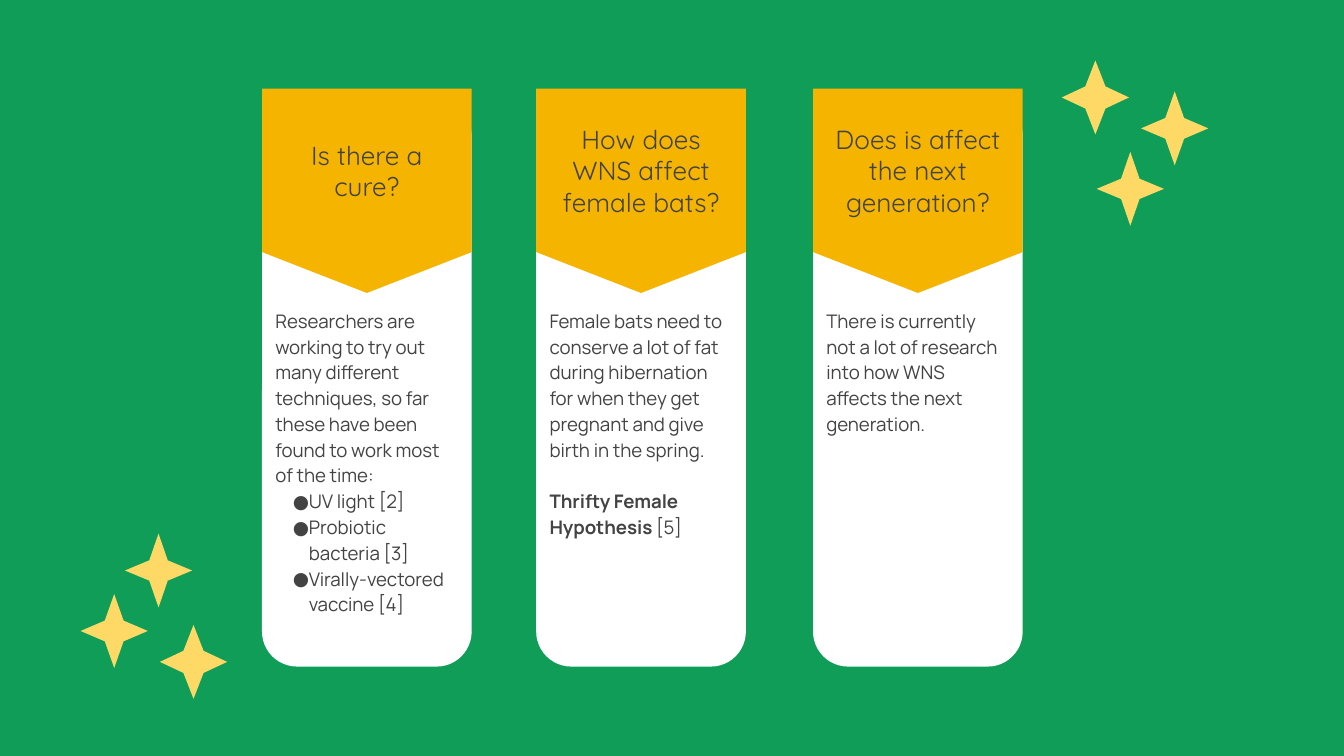
from dataclasses import dataclass
from typing import NamedTuple

from lxml.etree import SubElement
from pptx import Presentation
from pptx.dml.color import RGBColor
from pptx.enum.shapes import MSO_SHAPE
from pptx.enum.text import MSO_ANCHOR, PP_ALIGN
from pptx.oxml.ns import qn
from pptx.util import Inches, Pt

GREEN, GOLD, WHITE, YELLOW = "0F9D58", "F4B400", "FFFFFF", "FFD966"
GREY = "434343"
HEADING_FONT, BODY_FONT = "Quicksand", "Manrope"
CARD_WIDTH, ANSWER_WIDTH = 1.56, 1.55
STAR_WIDTH, STAR_HEIGHT = 0.5, 0.55


class Passage(NamedTuple):
    text: str
    lead: str = ""  # bold opening words
    bullet: bool = False
    before: float = 0


@dataclass
class Card:
    left: float
    heading: str
    passages: list[Passage]
    heading_color: str = "424242"


class Star(NamedTuple):
    left: float
    top: float
    waist: float


CARDS = [
    Card(1.95, "Is there a cure?", [
        Passage("Researchers are working to try out many different techniques, "
                "so far these have been found to work most of the time:"),
        Passage("UV light [2]", bullet=True),
        Passage("Probiotic bacteria [3]", bullet=True),
        Passage("Virally-vectored vaccine [4]", bullet=True),
    ]),
    Card(3.99, "How does WNS affect female bats?", [
        Passage("Female bats need to conserve a lot of fat during hibernation "
                "for when they get pregnant and give birth in the spring."),
        Passage(" [5]", lead="Thrifty Female Hypothesis", before=13.8),
    ]),
    Card(6.05, "Does is affect the next generation?", [
        Passage("There is currently not a lot of research into how WNS "
                "affects the next generation."),
    ], GREY),
]

STARS = [Star(0.93, 3.97, 0.194), Star(0.6, 4.42, 0.198), Star(1.19, 4.65, 0.212)]


def rgb(color: str) -> RGBColor:
    return RGBColor.from_string(color)


def add_block(slide, kind, left: float, top: float, width: float, height: float,
              color: str, adjust: float | None = None):
    block = slide.shapes.add_shape(
        kind, Inches(left), Inches(top), Inches(width), Inches(height))
    block.shadow.inherit = False
    block.fill.solid()
    block.fill.fore_color.rgb = rgb(color)
    block.line.fill.background()
    if adjust is not None:
        block.adjustments[0] = adjust
    return block


def prepare_frame(frame, anchor) -> None:
    frame.word_wrap = True
    frame.vertical_anchor = anchor
    frame.margin_left = frame.margin_right = Inches(0.1)
    frame.margin_top = frame.margin_bottom = Inches(0.1)


def add_text(paragraph, text: str, *, font: str, size: float, color: str = GREY,
             bold: bool = False) -> None:
    run = paragraph.add_run()
    run.text = text
    run.font.name = font
    run.font.size = Pt(size)
    run.font.bold = bold
    run.font.color.rgb = rgb(color)


def add_bullet(paragraph) -> None:
    properties = paragraph._p.get_or_add_pPr()
    properties.set("marL", str(Inches(0.25)))
    properties.set("indent", str(Inches(-0.12)))
    bullet_color = SubElement(properties, qn("a:buClr"))
    SubElement(bullet_color, qn("a:srgbClr"), val=GREY)
    SubElement(properties, qn("a:buSzPts"), val="1000")
    SubElement(properties, qn("a:buFont"), typeface=BODY_FONT)
    SubElement(properties, qn("a:buChar"), char="●")


def add_card(slide, card: Card) -> None:
    # White panel and gold pointed heading
    add_block(slide, MSO_SHAPE.ROUNDED_RECTANGLE, card.left, 0.75, CARD_WIDTH, 4.21,
              WHITE, 0.167)
    banner = add_block(slide, MSO_SHAPE.FLOWCHART_OFFPAGE_CONNECTOR, card.left, 0.66,
                       CARD_WIDTH, 1.52, GOLD)
    prepare_frame(banner.text_frame, MSO_ANCHOR.MIDDLE)
    heading = banner.text_frame.paragraphs[0]
    heading.alignment = PP_ALIGN.CENTER
    add_text(heading, card.heading, font=HEADING_FONT, size=14, color=card.heading_color)

    # Answer
    answer = slide.shapes.add_textbox(
        Inches(card.left), Inches(2.18), Inches(ANSWER_WIDTH), Inches(2.6)).text_frame
    prepare_frame(answer, MSO_ANCHOR.TOP)
    for index, passage in enumerate(card.passages):
        paragraph = answer.add_paragraph() if index else answer.paragraphs[0]
        if passage.bullet:
            add_bullet(paragraph)
        paragraph.line_spacing = 1.15
        if passage.before:
            paragraph.space_before = Pt(passage.before)
        if passage.lead:
            add_text(paragraph, passage.lead, font=BODY_FONT, size=10, bold=True)
        add_text(paragraph, passage.text, font=BODY_FONT, size=10)


def add_star(slide, star: Star, rotation: float = 0) -> None:
    sparkle = add_block(slide, MSO_SHAPE.STAR_4_POINT, star.left, star.top,
                        STAR_WIDTH, STAR_HEIGHT, YELLOW, star.waist)
    sparkle.rotation = rotation


def main() -> None:
    # Widescreen, 16 to 9
    deck = Presentation()
    deck.slide_width = Inches(10)
    deck.slide_height = Inches(10 * 9 / 16)
    slide = deck.slides.add_slide(deck.slide_layouts[6])
    slide.background.fill.solid()
    slide.background.fill.fore_color.rgb = rgb(GREEN)

    for card in CARDS:
        add_card(slide, card)

    # The upper right cluster is the lower left one turned by half a circle
    for star in STARS:
        add_star(slide, star)
        add_star(slide, Star(9.09 - star.left, 5.1 - star.top, star.waist), 180)

    deck.save("out.pptx")


if __name__ == "__main__":
    main()
